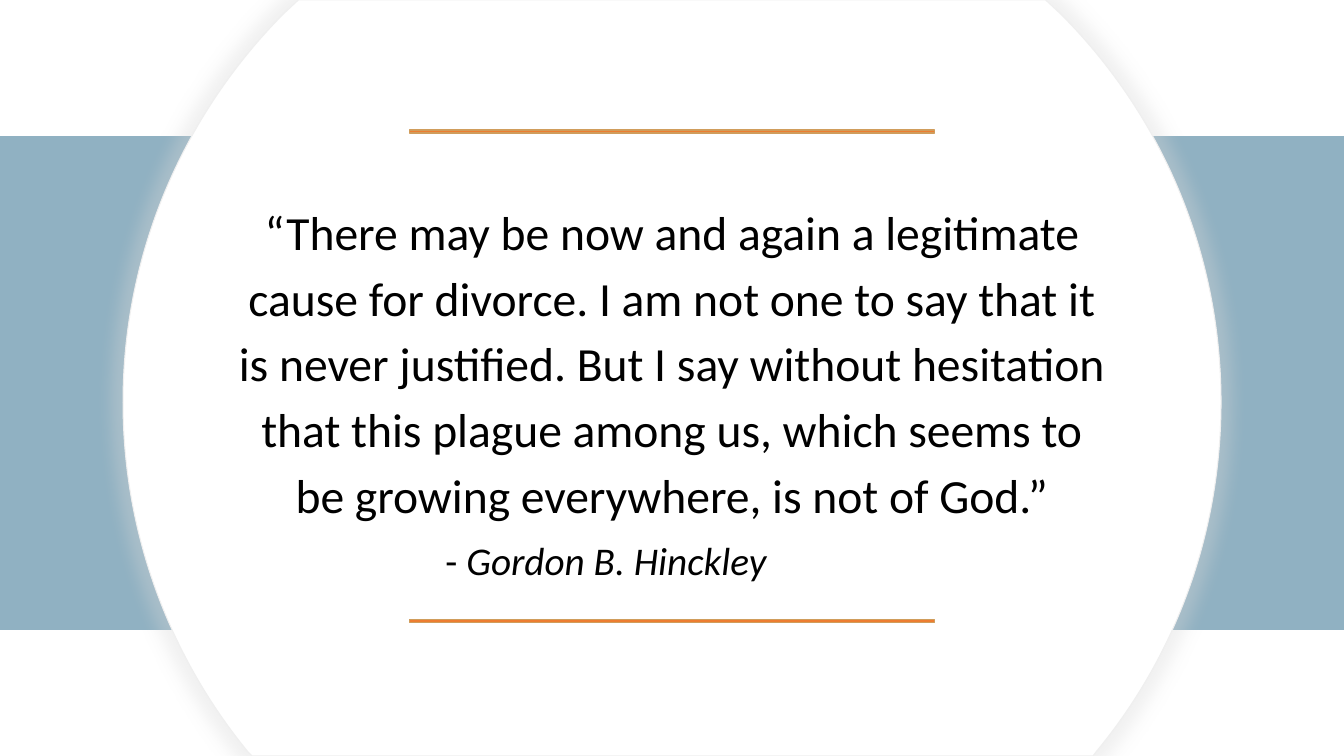
from lxml import etree
from pptx import Presentation
from pptx.dml.color import RGBColor
from pptx.enum.shapes import MSO_SHAPE
from pptx.enum.text import MSO_ANCHOR, PP_ALIGN
from pptx.oxml.ns import qn
from pptx.util import Inches, Pt

RECTANGLE = MSO_SHAPE.RECTANGLE
TOP, BOTTOM = MSO_ANCHOR.TOP, MSO_ANCHOR.BOTTOM
CENTER, LEFT = PP_ALIGN.CENTER, PP_ALIGN.LEFT

BLUE = RGBColor(0x90, 0xB1, 0xC2)
WHITE = RGBColor(0xFF, 0xFF, 0xFF)
PALE_GREY = RGBColor(0xEF, 0xEF, 0xEF)
ORANGE = RGBColor(0xED, 0x7D, 0x31)
TAN = RGBColor(0xD0, 0x9D, 0x5C)
BLACK = RGBColor(0, 0, 0)

WIDTH, HEIGHT = 13.33, 7.5
RULE_WIDTH = 5.2
DISC_LEFT = 1.22

# Circle cut off by the top and bottom slide edges
DISC_CORNERS = [
    (2.96, 0), (10.37, 0), (10.52, 0.14), (12.11, 3.99), (10.87, 7.46),
    (10.84, 7.5), (2.5, 7.5), (2.46, 7.46), (DISC_LEFT, 3.99), (2.81, 0.14),
]
# Control points of the curved sides, by the corner where each curve ends
DISC_CURVES = {
    3: [(11.51, 1.13), (12.11, 2.49)],
    4: [(12.11, 5.31), (11.65, 6.52)],
    8: [(1.69, 6.52), (DISC_LEFT, 5.31)],
    9: [(DISC_LEFT, 2.49), (1.83, 1.13)],
}

QUOTE = (
    "“There may be now and again a legitimate cause for divorce. "
    "I am not one to say that it is never justified. But I say without "
    "hesitation that this plague among us, which seems to be growing "
    "everywhere, is not of God.”"
)


def paint(shape, fill, line):
    shape.shadow.inherit = False
    shape.fill.solid()
    shape.fill.fore_color.rgb = fill
    shape.line.color.rgb = line
    shape.line.width = Pt(0.75)


def add_text(box, anchor, margin_y, runs, size, align, spacing):
    """Add one paragraph; runs are (text, italic) pairs."""
    frame = slide.shapes.add_textbox(*map(Inches, box)).text_frame
    frame_format = {
        "word_wrap": True,
        "vertical_anchor": anchor,
        "margin_left": Inches(0.1),
        "margin_right": Inches(0.1),
        "margin_top": Inches(margin_y),
        "margin_bottom": Inches(margin_y),
    }
    for name, value in frame_format.items():
        setattr(frame, name, value)
    paragraph = frame.paragraphs[0]
    paragraph.alignment = align
    paragraph.line_spacing = spacing
    for text, italic in runs:
        run = paragraph.add_run()
        run.text = text
        run_format = {"name": "Calibri", "size": Pt(size), "italic": italic}
        for name, value in run_format.items():
            setattr(run.font, name, value)
        run.font.color.rgb = BLACK


prs = Presentation()
prs.slide_width, prs.slide_height = Inches(WIDTH), Inches(HEIGHT)
slide = prs.slides.add_slide(prs.slide_layouts[6])

band = slide.shapes.add_shape(
    RECTANGLE, 0, Inches(1.35), Inches(WIDTH), Inches(4.9)
)
paint(band, BLUE, BLUE)

corners = [(Inches(x), Inches(y)) for x, y in DISC_CORNERS]
builder = slide.shapes.build_freeform(*corners[0])
builder.add_line_segments(corners[1:], close=True)
disc = builder.convert_to_shape()
paint(disc, WHITE, PALE_GREY)

segments = list(disc._element.iter(qn("a:lnTo")))
for corner, controls in DISC_CURVES.items():
    segment = segments[corner - 1]
    segment.tag = qn("a:cubicBezTo")
    for position, (x, y) in enumerate(controls):
        point = etree.Element(
            qn("a:pt"), x=str(Inches(x - DISC_LEFT)), y=str(Inches(y))
        )
        segment.insert(position, point)

effects = disc._element.spPr.find(qn("a:effectLst"))
halo = etree.SubElement(
    effects, qn("a:outerShdw"), blurRad=str(Pt(11)),
    sx="102000", sy="102000", algn="ctr", rotWithShape="0",
)
halo_color = etree.SubElement(halo, qn("a:srgbClr"), val="D8D8D8")
etree.SubElement(halo_color, qn("a:alpha"), val="37000")

for top in (1.29, 6.15):
    rule = slide.shapes.add_shape(
        RECTANGLE, Inches((WIDTH - RULE_WIDTH) / 2), Inches(top),
        Inches(RULE_WIDTH), Inches(0.03),
    )
    paint(rule, ORANGE, TAN)

add_text(
    (2.21, 1.83, 8.91, 3.49), TOP, 0.1, [(QUOTE, False)], 34, CENTER, 1.15
)
add_text(
    (4.32, 4.8, 5.2, 1.04), BOTTOM, 0.05,
    [("- ", False), ("Gordon B. Hinckley", True)], 28, LEFT, 1.0,
)

prs.save("out.pptx")
